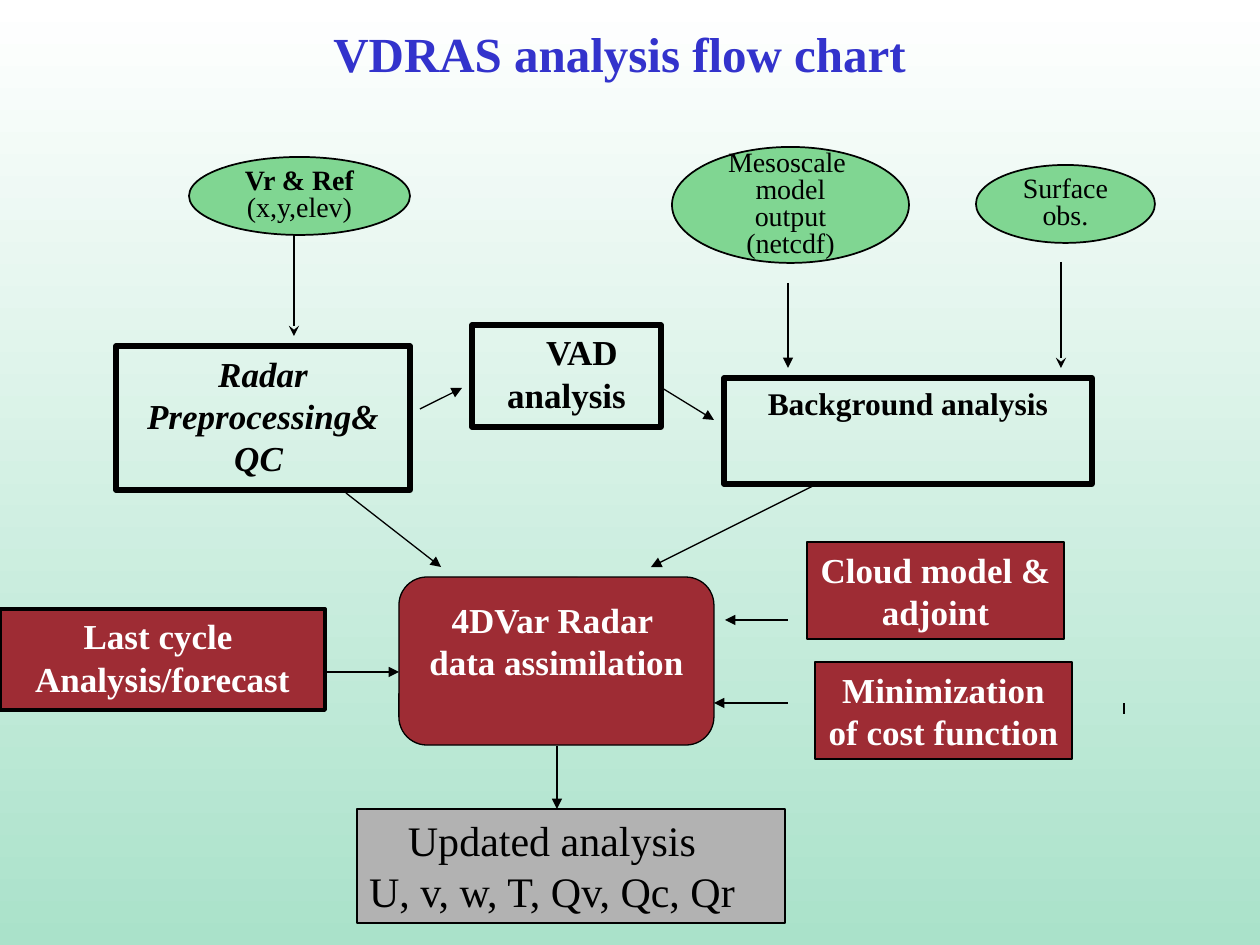
from lxml import etree
from pptx import Presentation
from pptx import util as u
from pptx.dml.color import RGBColor
from pptx.enum import shapes, text
from pptx.oxml.ns import qn

PX = 914400 / 126
BLACK = RGBColor(0, 0, 0)
WHITE = RGBColor(255, 255, 255)
BLUE = RGBColor(0x33, 0x33, 0xCC)
MINT = RGBColor(0xAA, 0xE2, 0xCA)
GREEN = RGBColor(0x80, 0xD6, 0x92)
RED = RGBColor(0x9E, 0x2C, 0x34)
GRAY = RGBColor(0xB2, 0xB2, 0xB2)
FONT = "Times New Roman"

KIND = shapes.MSO_SHAPE
MIDDLE = text.MSO_ANCHOR.MIDDLE

# Styles shared by the boxes of one role
INPUT = dict(kind=KIND.OVAL, fill=GREEN, line=1, size=16, anchor=MIDDLE,
             spacing=0.8, insets=(13, 0, 13, 0))
STEP = dict(line=3, size=20, bold=True)
MODEL = dict(fill=RED, line=1.5, size=20, bold=True, color=WHITE, wrap=False)

# (left, top, width, height), lines, format
BOXES = [
    ((189, 157, 221, 78), ["Vr & Ref", "(x,y,elev)"], INPUT | dict(bold_lines=(0,))),
    ((672, 147, 237, 116), ["Mesoscale ", "model output", "(netcdf)"], INPUT),
    ((976, 165, 179, 78), ["Surface", "obs."], INPUT),
    ((116, 346, 294, 144), ["Radar Preprocessing& QC "], STEP | dict(italic=True)),
    ((472, 325, 189, 102), ["VAD", "analysis"], STEP | dict(indents=(31, 0))),
    ((724, 378, 368, 106), ["Background analysis"], STEP | dict(size=18)),
    ((399, 577, 315, 168), ["4DVar Radar ", "data assimilation"],
     MODEL | dict(kind=KIND.ROUNDED_RECTANGLE, line=0.75, anchor=MIDDLE,
                  insets=(13, 6, 13, 48))),
    ((807, 542, 257, 97), ["Cloud model &", "adjoint"], MODEL),
    ((815, 662, 257, 97), ["Minimization", "of cost function"], MODEL),
    ((0, 609, 325, 101), ["Last cycle ", "Analysis/forecast"],
     MODEL | dict(line=2.25, wrap=True)),
    ((357, 809, 428, 114), ["Updated analysis", "U, v, w, T, Qv, Qc, Qr"],
     dict(fill=GRAY, line=0.75, size=24, wrap=False, insets=(13, 6, 51, 6))),
]

# (from x, from y, to x, to y), arrowhead
ARROWS = [
    ((294, 235, 294, 336), "stealth"),
    ((1061, 262, 1061, 368), "stealth"),
    ((420, 409, 462, 388), "triangle"),
    ((662, 388, 714, 420), "triangle"),
    ((788, 283, 788, 368), "triangle"),
    ((346, 493, 441, 567), "triangle"),
    ((819, 483, 651, 567), "triangle"),
    ((788, 620, 725, 620), "triangle"),
    ((788, 703, 714, 703), "triangle"),
    ((325, 672, 399, 672), "triangle"),
    ((557, 746, 557, 809), "triangle"),
    ((1124, 714, 1124, 703), None),
]


def emu(*lengths):
    return [round(length * PX) for length in lengths]


def write(box, lines, size=20, color=BLACK, bold=False, italic=False, bold_lines=(),
          anchor=text.MSO_ANCHOR.TOP, insets=(13, 6, 13, 6), spacing=None,
          indents=(), wrap=True):
    frame = box.text_frame
    frame.word_wrap = wrap
    frame.auto_size = text.MSO_AUTO_SIZE.NONE
    frame.vertical_anchor = anchor
    (frame.margin_left, frame.margin_top,
     frame.margin_right, frame.margin_bottom) = emu(*insets)
    for index, line in enumerate(lines):
        para = frame.add_paragraph() if index else frame.paragraphs[0]
        para.alignment = text.PP_ALIGN.CENTER
        if spacing:
            para.line_spacing = spacing
        if index < len(indents):
            para._p.get_or_add_pPr().set("marL", str(emu(indents[index])[0]))
        span = para.add_run()
        span.text = line
        span.font.name = FONT
        span.font.size = u.Pt(size)
        span.font.bold = bold or index in bold_lines
        span.font.italic = italic
        span.font.color.rgb = color


def add_box(page, place, lines, kind=KIND.RECTANGLE, fill=None, line=1, **style):
    box = page.shapes.add_shape(kind, *emu(*place))
    box.shadow.inherit = False
    if fill is None:
        box.fill.background()
    else:
        box.fill.solid()
        box.fill.fore_color.rgb = fill
    box.line.color.rgb = BLACK
    box.line.width = u.Pt(line)
    write(box, lines, **style)


def add_arrow(page, ends, head):
    arrow = page.shapes.add_connector(shapes.MSO_CONNECTOR.STRAIGHT, *emu(*ends))
    arrow.line.color.rgb = BLACK
    arrow.line.width = u.Pt(0.75)
    if head:
        etree.SubElement(arrow.line._get_or_add_ln(), qn("a:tailEnd"), type=head)
    etree.SubElement(arrow._element.spPr, qn("a:effectLst"))


def main():
    deck = Presentation()
    deck.slide_width, deck.slide_height = emu(1260, 945)
    page = deck.slides.add_slide(deck.slide_layouts[6])

    # Background: mint at the bottom, white at the top
    backdrop = page.background.fill
    backdrop.gradient()
    backdrop.gradient_angle = 90
    for stop, color in zip(backdrop.gradient_stops, (MINT, WHITE)):
        stop.color.rgb = color

    # Title
    title = page.shapes.add_textbox(*emu(84, 0, 1071, 105))
    write(title, ["VDRAS analysis flow chart"], size=28, color=BLUE, bold=True,
          anchor=MIDDLE)

    # Flow chart
    for place, lines, style in BOXES:
        add_box(page, place, lines, **style)
    for ends, head in ARROWS:
        add_arrow(page, ends, head)

    deck.save("out.pptx")


if __name__ == "__main__":
    main()
